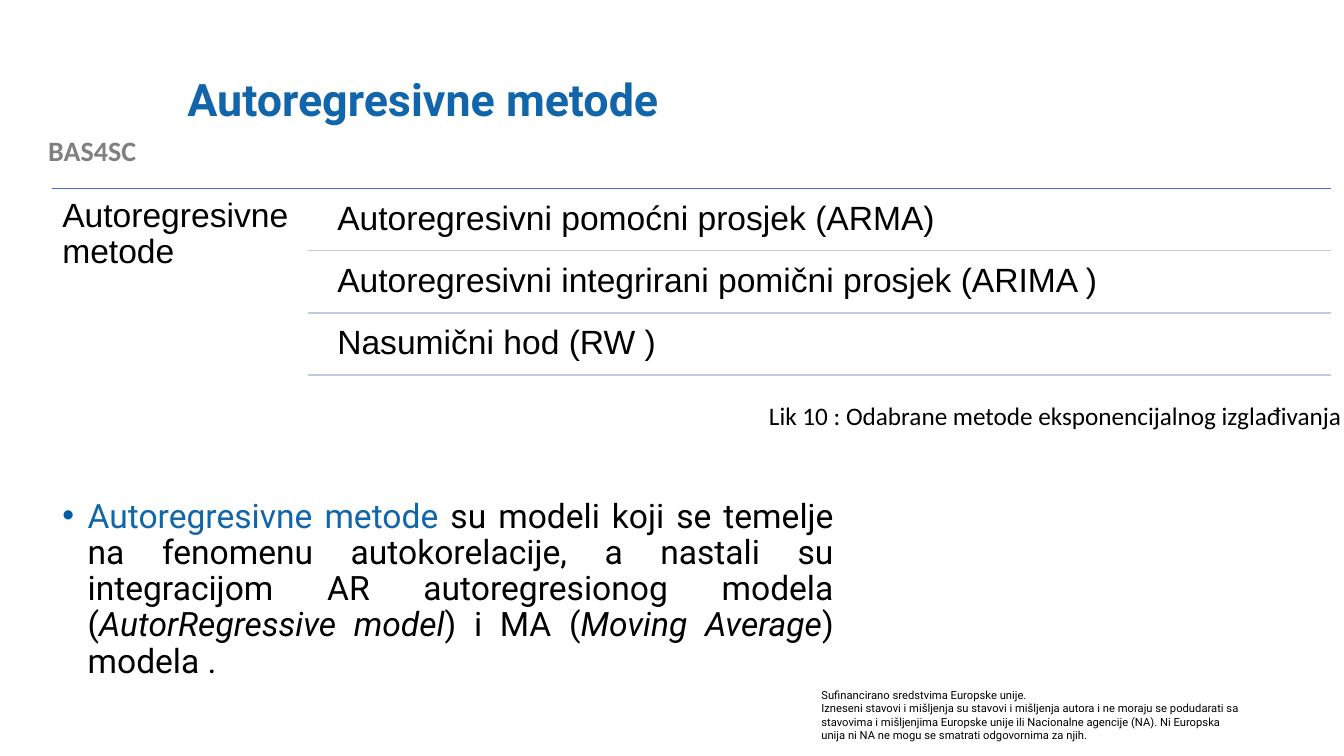
from lxml import etree
from pptx import Presentation
from pptx.dml.color import RGBColor
from pptx.enum.shapes import MSO_CONNECTOR
from pptx.enum.text import MSO_ANCHOR, PP_ALIGN
from pptx.oxml.ns import qn
from pptx.util import Cm, Pt

BLACK = RGBColor(0x00, 0x00, 0x00)
GRAY = RGBColor(0x80, 0x80, 0x80)
BLUE = RGBColor(0x10, 0x65, 0xAB)
BULLET_BLUE = RGBColor(0x01, 0x5B, 0xA6)
TOP_LINE = RGBColor(0x44, 0x72, 0xC4)
ROW_LINE = RGBColor(0xC1, 0xC9, 0xE4)

METHODS = [
    "Autoregresivni pomoćni prosjek (ARMA)",
    "Autoregresivni integrirani pomični prosjek (ARIMA )",
    "Nasumični hod (RW )",
]
DEFINITION = [
    ("Autoregresivne metode ", {"color": BLUE}),
    ("su modeli koji se temelje na fenomenu autokorelacije, a nastali su "
     "integracijom AR autoregresionog modela (", {}),
    ("AutorRegressive model", {"italic": True}),
    (") i MA (", {}),
    ("Moving Average", {"italic": True}),
    (") modela .", {}),
]
DISCLAIMER = [
    "Sufinancirano sredstvima Europske unije.",
    "Izneseni stavovi i mišljenja su stavovi i mišljenja autora i ne moraju "
    "se podudarati sa stavovima i mišljenjima Europske unije ili Nacionalne "
    "agencije (NA). Ni Europska unija ni NA ne mogu se smatrati odgovornima "
    "za njih.",
]


def add_run(p, text, color=BLACK, **font):
    r = p.add_run()
    r.text = text
    r.font.color.rgb = color
    for name, value in font.items():
        setattr(r.font, name, value)


def add_text(s, box, lines, font, para=None, frame=None):
    """Add a text box at box (left, top, width, height in cm), one paragraph per line."""
    tf = s.shapes.add_textbox(*map(Cm, box)).text_frame
    for name, value in {"word_wrap": True, **(frame or {})}.items():
        setattr(tf, name, value)
    for i, line in enumerate(lines):
        p = tf.paragraphs[0] if i == 0 else tf.add_paragraph()
        for name, value in (para or {}).items():
            setattr(p, name, value)
        add_run(p, line, **font)
    return tf


def add_rule(s, left, right, y, color):
    line = s.shapes.add_connector(
        MSO_CONNECTOR.STRAIGHT, Cm(left), Cm(y), Cm(right), Cm(y))
    line.line.color.rgb = color
    line.line.width = Pt(1)
    etree.SubElement(line._element.spPr, qn("a:effectLst"))


def add_bullet(p, char, color, indent):
    pPr = p._p.get_or_add_pPr()
    pPr.set("marL", str(indent))
    pPr.set("indent", str(-indent))
    clr = etree.SubElement(pPr, qn("a:buClr"))
    etree.SubElement(clr, qn("a:srgbClr"), val=str(color))
    etree.SubElement(pPr, qn("a:buFont"), typeface="Arial")
    etree.SubElement(pPr, qn("a:buChar"), char=char)


def add_definition(s, box):
    tf = add_text(s, box, [], {})
    p = tf.paragraphs[0]
    add_bullet(p, "•", BULLET_BLUE, Cm(0.64))
    p.alignment = PP_ALIGN.JUSTIFY
    p.line_spacing = 0.9
    for text, style in DEFINITION:
        add_run(p, text, name="Roboto", size=Pt(24), **style)


def add_method_list(s, box):
    """Group label on the left, one ruled row per method on the right."""
    left, top, width, height = box
    right = left + width
    label_w, inset, gap = 6.45, 0.48, 0.08
    row_h = height / len(METHODS)
    font = {"name": "Arial", "size": Pt(24)}
    para = {"line_spacing": 0.9}
    frame = {f"margin_{side}": Cm(0.25)
             for side in ("left", "top", "right", "bottom")}

    add_rule(s, left, right, top, TOP_LINE)
    add_text(s, (left, top, label_w, height),
             ["Autoregresivne metode"], font, para, frame)
    row_left = left + label_w
    for i, method in enumerate(METHODS):
        y = top + i * row_h
        text_left = row_left + inset
        add_text(s, (text_left, y + gap, right - text_left, row_h - gap),
                 [method], font, para, frame)
        add_rule(s, row_left, right, y + row_h, ROW_LINE)


def add_header(s, title_box, project_box):
    add_text(s, project_box, ["BAS4SC"],
             {"name": "Calibri", "size": Pt(20), "bold": True, "color": GRAY},
             {"alignment": PP_ALIGN.CENTER})
    add_text(s, title_box, ["Autoregresivne metode"],
             {"name": "Roboto", "size": Pt(32), "bold": True, "color": BLUE},
             {"line_spacing": 0.9}, {"vertical_anchor": MSO_ANCHOR.MIDDLE})


def add_caption(s, box):
    add_text(s, box, ["Lik 10 : Odabrane metode eksponencijalnog izglađivanja"],
             {"name": "Calibri", "size": Pt(18)},
             frame={"word_wrap": False, "margin_right": 0})


def add_disclaimer(s, box):
    add_text(s, box, DISCLAIMER, {"name": "Roboto", "size": Pt(8)})


def main():
    prs = Presentation()
    prs.slide_width, prs.slide_height = Cm(33.87), Cm(19.05)
    s = prs.slides.add_slide(prs.slide_layouts[6])
    add_header(s, (4.47, 1.02, 27.08, 3.1), (0, 3.25, 4.65, 1.12))
    add_method_list(s, (1.32, 4.75, 32.21, 4.7))
    add_caption(s, (19.13, 9.96, 14.7, 1.02))
    add_definition(s, (1.32, 12.45, 19.94, 5.59))
    add_disclaimer(s, (20.45, 17.22, 11.1, 1.63))
    prs.save("out.pptx")


if __name__ == "__main__":
    main()
